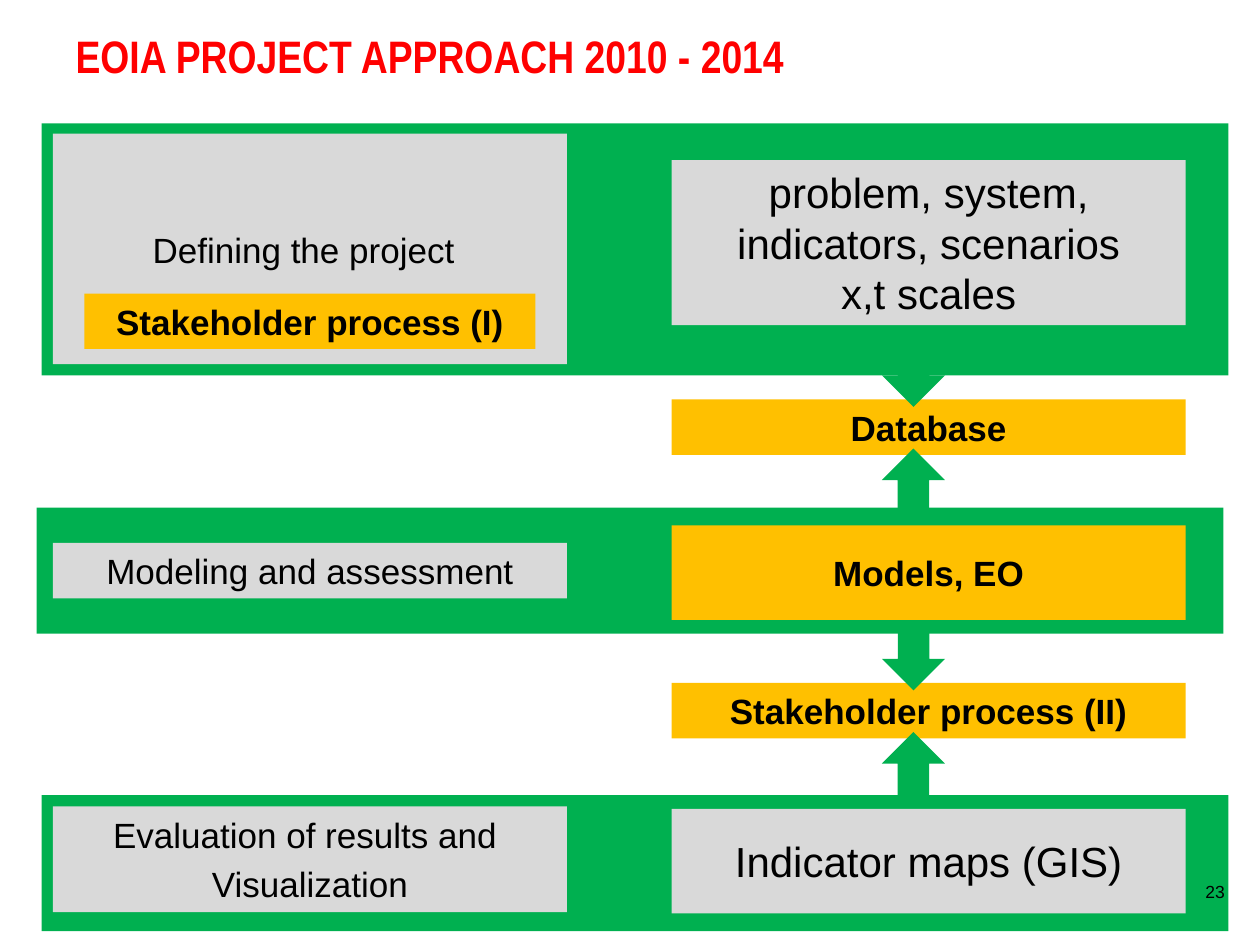
"""Builds the EOIA project approach slide: three phase bands, their outputs and linking arrows."""
from lxml import etree
from pptx import Presentation
from pptx import util as u
from pptx.dml.color import RGBColor
from pptx.enum import shapes, text
from pptx.oxml import ns

GREEN, GREY, AMBER = "00B050", "D9D9D9", "FFC000"
BLACK, RED = "000000", "FF0000"
LEFT, RIGHT, COLUMN, ROW = 0.42, 5.33, 4.08, 0.44
BAND_WIDTH, ARROW_LEFT, ARROW = 9.42, 7, 0.5


def paint(target, colour):
    if hasattr(target, "solid"):
        target.solid()
        target = target.fore_color
    else:
        target = target.color
    target.rgb = RGBColor.from_string(colour)


def block(kind, place, colour, lines=(), size=20, bold=False):
    shape = slide.shapes.add_shape(kind, *map(u.Inches, place))
    shape.shadow.inherit = False
    paint(shape.fill, colour)
    shape.line.fill.background()
    frame = shape.text_frame
    frame.word_wrap = True
    frame.vertical_anchor = text.MSO_ANCHOR.MIDDLE
    for number, line in enumerate(lines):
        paragraph = frame.add_paragraph() if number else frame.paragraphs[0]
        paragraph.text = line
        paragraph.alignment = text.PP_ALIGN.CENTER
        paragraph.font.name, paragraph.font.size = "Arial", u.Pt(size)
        paragraph.font.bold = bold
        paint(paragraph.font, BLACK)
    return shape


deck = Presentation()
deck.slide_width, deck.slide_height = u.Inches(10), u.Inches(7.5)
slide = deck.slides.add_slide(deck.slide_layouts[1])
RECTANGLE = shapes.MSO_SHAPE.RECTANGLE

for left, top, height in [(0.33, 6.31, 1.08), (0.29, 4.03, 1), (0.33, 0.98, 2)]:
    block(RECTANGLE, (left, top, BAND_WIDTH, height), GREEN)

title, definition = slide.placeholders
title.left, title.top, title.width, title.height = map(u.Inches, (0.5, 0.17, 9, 1.08))
title.text_frame.text = "EOIA PROJECT APPROACH 2010 - 2014"
title.text_frame.vertical_anchor = text.MSO_ANCHOR.TOP
heading = title.text_frame.paragraphs[0]
heading.alignment = text.PP_ALIGN.LEFT
heading.font.name, heading.font.size, heading.font.bold = "Arial Narrow", u.Pt(26), True
paint(heading.font, RED)

slide.shapes.element.append(definition.element)
definition.left, definition.top, definition.width, definition.height = map(
    u.Inches, (LEFT, 1.06, COLUMN, 1.83))
paint(definition.fill, GREY)
definition.text_frame.text = "Defining the project"
definition.text_frame.vertical_anchor = text.MSO_ANCHOR.MIDDLE
definition.text_frame.margin_left = 0
phase = definition.text_frame.paragraphs[0]
properties = phase._p.get_or_add_pPr()
properties.set("marL", "0")
properties.set("indent", "0")
etree.SubElement(properties, ns.qn("a:buNone"))
phase.alignment = text.PP_ALIGN.CENTER
phase.line_spacing, phase.space_before = u.Pt(25), u.Pt(0)
phase.font.name, phase.font.size = "Arial", u.Pt(20)
paint(phase.font, BLACK)

for left, top, width, height, colour, lines, size in [
    (RIGHT, 1.27, COLUMN, 1.31, GREY,
     ["problem, system, indicators, scenarios", "x,t scales"], 24),
    (RIGHT, 3.17, COLUMN, ROW, AMBER, ["Database"], 20),
    (RIGHT, 5.42, COLUMN, ROW, AMBER, ["Stakeholder process (II)"], 20),
    (LEFT, 4.31, COLUMN, ROW, GREY, ["Modeling and assessment"], 20),
    (LEFT, 6.4, COLUMN, 0.84, GREY, ["Evaluation of results and ", "Visualization"], 20),
    (RIGHT, 4.17, COLUMN, 0.75, AMBER, ["Models, EO"], 20),
    (RIGHT, 6.42, COLUMN, 0.83, GREY, ["Indicator maps (GIS)"], 24),
    (0.67, 2.33, 3.58, ROW, AMBER, ["Stakeholder process (I)"], 20),
]:
    step = block(RECTANGLE, (left, top, width, height), colour, lines, size, colour == AMBER)
    if left == LEFT and len(lines) > 1:
        step.text_frame.paragraphs[1].space_before = u.Pt(4)

for top, turn in [(2.73, 90), (3.56, 270), (4.98, 90), (5.81, 270)]:
    link = block(shapes.MSO_SHAPE.RIGHT_ARROW, (ARROW_LEFT, top, ARROW, ARROW), GREEN)
    link.rotation = turn

page = slide.shapes.add_textbox(*map(u.Inches, (9.31, 6.9, 0.41, 0.52))).text_frame
page.word_wrap = True
page.margin_right = 0
page.text = "23"
number = page.paragraphs[0]
number.alignment, number.line_spacing = text.PP_ALIGN.RIGHT, u.Pt(15)
number.font.name, number.font.size = "Arial", u.Pt(10)
paint(number.font, BLACK)

deck.save("out.pptx")
